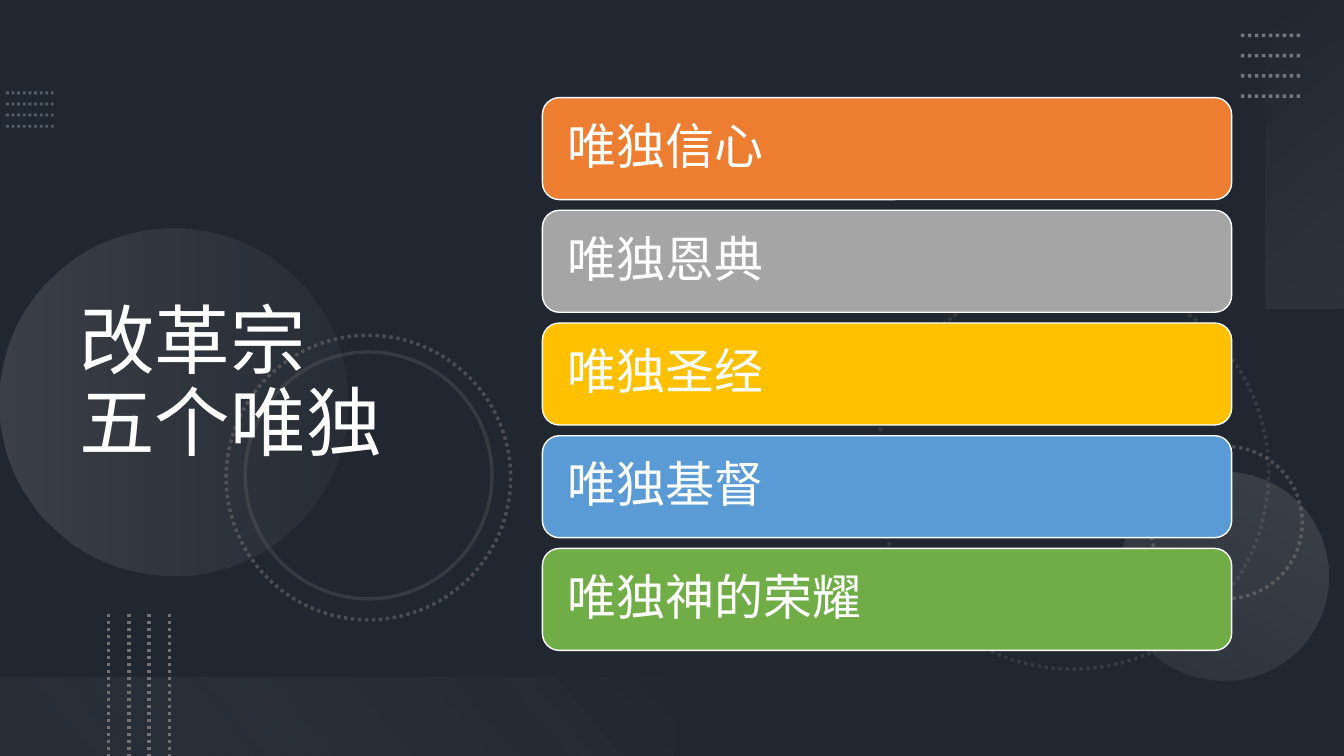
from dataclasses import dataclass

from lxml import etree
from pptx import Presentation
from pptx import util as u
from pptx.dml import color
from pptx.enum import dml, shapes, text
from pptx.oxml import ns


@dataclass(frozen=True)
class Theme:
    font: str = "Calibri"
    back: str = "44546A"
    black: str = "000000"
    white: str = "FFFFFF"
    mist: str = "F5F5F5"
    silver: str = "AFABAB"
    stone: str = "767171"
    steel: str = "8497B0"
    bars: tuple = ("ED7D31", "A5A5A5", "FFC000", "5B9BD5", "70AD47")
    title: int = 54
    label: int = 35


THEME = Theme()
SOLAS = ("唯独信心", "唯独恩典", "唯独圣经", "唯独基督", "唯独神的荣耀")


def rgb(code):
    return color.RGBColor.from_string(code)


def fade(node, *levels):
    for tint, level in zip(node.iter(ns.qn("a:srgbClr")), levels):
        etree.SubElement(tint, ns.qn("a:alpha"), val=str(level * 1000))


def stroke(line, tint, width, alpha=100, dots=False):
    line.color.rgb = rgb(tint)
    line.width = u.Pt(width)
    if dots:
        line.dash_style = dml.MSO_LINE.ROUND_DOT
    fade(line.color._xFill, alpha)


def shape(slide, kind, left, top, width, height, fill=None, turn=0):
    item = slide.shapes.add_shape(
        kind, u.Cm(left), u.Cm(top), u.Cm(width), u.Cm(height))
    item.shadow.inherit = False
    item.rotation = turn
    item.line.fill.background()
    if fill:
        item.fill.solid()
        item.fill.fore_color.rgb = rgb(fill)
    else:
        item.fill.background()
    return item


def blend(item, angle, *stops):
    item.fill.gradient()
    item.fill.gradient_angle = 360 - angle
    for stop, (place, tint, alpha) in zip(item.fill.gradient_stops, stops):
        stop.position = place
        stop.color.rgb = rgb(tint)
    fade(item.fill._xPr.find(ns.qn("a:gradFill")), *(s[2] for s in stops))


def ring(slide, left, top, size, alpha, dots=True):
    item = shape(slide, shapes.MSO_SHAPE.OVAL, left, top, size, size)
    stroke(item.line, THEME.stone, 2.5, alpha, dots)


def disc(slide, left, top, size, turn, *stops):
    item = shape(slide, shapes.MSO_SHAPE.OVAL, left, top, size, size, turn=turn)
    blend(item, 90, *stops)


def panel(slide, left, top, width, height, turn, *stops):
    item = shape(slide, shapes.MSO_SHAPE.RECTANGLE, left, top, width, height, turn=turn)
    blend(item, 140, *stops)


def dots(slide, left, top, across, down, step, tint, width, alpha):
    for n in range(4):
        x = left + (n * step if down else 0)
        y = top + (n * step if across else 0)
        line = slide.shapes.add_connector(
            shapes.MSO_CONNECTOR.STRAIGHT,
            u.Cm(x), u.Cm(y), u.Cm(x + across), u.Cm(y + down))
        stroke(line.line, tint, width, alpha, True)
        etree.SubElement(line._element.spPr, ns.qn("a:effectLst"))


def write(item, words, size, inset=(0.25, 0.13), after=0):
    frame = item.text_frame
    frame.word_wrap = True
    frame.vertical_anchor = text.MSO_ANCHOR.MIDDLE
    frame.margin_left = frame.margin_right = u.Cm(inset[0])
    frame.margin_top = frame.margin_bottom = u.Cm(inset[1])
    para = frame.paragraphs[0]
    para.alignment = text.PP_ALIGN.LEFT
    para.line_spacing = 0.9
    para.space_after = u.Pt(after)
    for n, row in enumerate(words.splitlines()):
        if n:
            para.add_line_break()
        run = para.add_run()
        run.text = row
        run.font.name = THEME.font
        run.font.size = u.Pt(size)
        run.font.color.rgb = rgb(THEME.white)


def scene(slide):
    slide.background.fill.solid()
    slide.background.fill.fore_color.rgb = rgb(THEME.back)
    veil = shape(slide, shapes.MSO_SHAPE.RECTANGLE, 0, 0, 33.87, 19.05, THEME.black)
    fade(veil.fill._xPr, 53)

    dots(slide, 0.15, 2.34, 1.2, 0, 0.28, THEME.steel, 2, 50)
    ring(slide, 22.07, 6.96, 9.9, 25)
    ring(slide, 28.98, 11.25, 3.84, 50)
    disc(slide, 0, 5.76, 8.75, 270, (0, THEME.silver, 20), (1, THEME.stone, 10))
    disc(slide, 28.2, 11.87, 5.28, 210, (0, THEME.silver, 10), (1, THEME.silver, 20))
    ring(slide, 5.7, 8.45, 7.17, 50)
    ring(slide, 6.18, 8.87, 6.22, 25, False)
    panel(slide, 29, 2.9, 7.77, 1.98, 270, (0, THEME.mist, 0), (1, THEME.silver, 10))
    dots(slide, 31.27, 0.89, 1.52, 0, 0.51, THEME.silver, 2.5, 60)
    panel(slide, 0, 17.07, 16.94, 1.98, 180, (0.1, THEME.stone, 10), (1, THEME.mist, 0))
    dots(slide, 2.74, 15.47, 0, 3.58, 0.51, THEME.stone, 2.5, 100)


def bars(slide):
    for n, (words, tint) in enumerate(zip(SOLAS, THEME.bars)):
        bar = shape(slide, shapes.MSO_SHAPE.ROUNDED_RECTANGLE,
                    13.67, 2.46 + n * 2.84, 17.37, 2.57, tint)
        stroke(bar.line, THEME.white, 1)
        write(bar, words, THEME.label, inset=(0.51, 0.51), after=12)


def main():
    deck = Presentation()
    deck.slide_width, deck.slide_height = u.Cm(33.87), u.Cm(19.05)
    slide = deck.slides.add_slide(deck.slide_layouts[6])
    scene(slide)
    title = slide.shapes.add_textbox(u.Cm(1.75), u.Cm(2.34), u.Cm(11.66), u.Cm(14.71))
    write(title, "改革宗\n五个唯独", THEME.title)
    bars(slide)
    deck.save("out.pptx")


if __name__ == "__main__":
    main()
